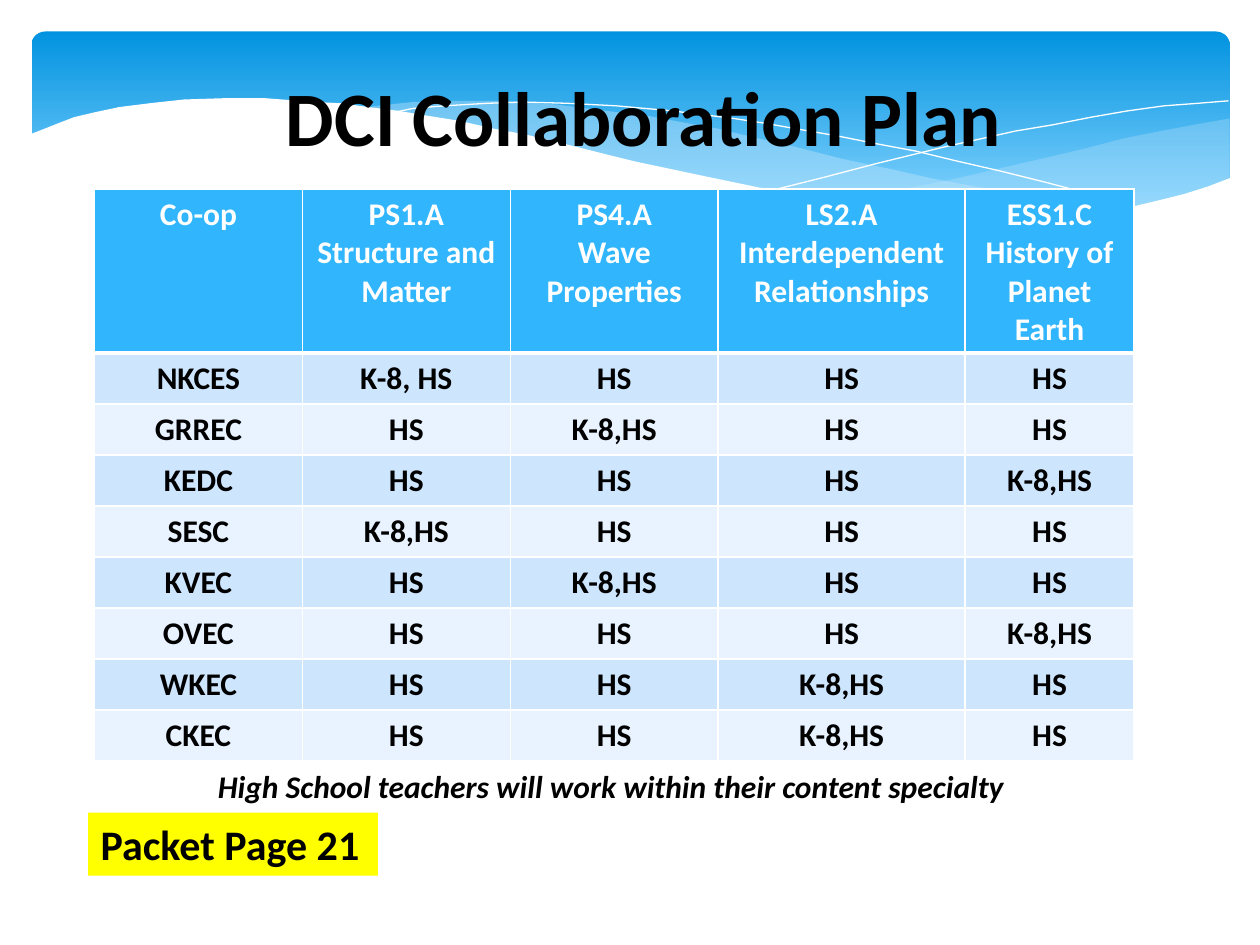
from lxml import etree
from pptx import Presentation
from pptx.dml.color import RGBColor
from pptx.enum.shapes import MSO_SHAPE as Shape
from pptx.enum.text import MSO_ANCHOR as Anchor, PP_ALIGN as Align
from pptx.oxml.ns import qn
from pptx.util import Inches, Pt

BLACK = RGBColor(0x00, 0x00, 0x00)
WHITE = RGBColor(0xFF, 0xFF, 0xFF)
YELLOW = RGBColor(0xFF, 0xFF, 0x00)
BANNER_TOP = RGBColor(0x02, 0x93, 0xE0)
BANNER_BOTTOM = RGBColor(0x83, 0xD3, 0xFE)
WAVE_BLUE = RGBColor(0xC6, 0xE7, 0xFC)
HEADER_BLUE = RGBColor(0x31, 0xB6, 0xFD)
BAND_DARK = RGBColor(0xCE, 0xE5, 0xFE)
BAND_LIGHT = RGBColor(0xE8, 0xF3, 0xFF)

prs = Presentation()
prs.slide_width, prs.slide_height = Inches(10), Inches(7.5)
slide = prs.slides.add_slide(prs.slide_layouts[6])
shapes = slide.shapes


def write_text(frame, text, size=18, color=BLACK, align=Align.LEFT,
               italic=False, wrap=True):
    """Fill a text frame with bold Calibri, one paragraph per line of text."""
    frame.text = text
    frame.word_wrap = wrap
    for paragraph in frame.paragraphs:
        paragraph.alignment = align
        font = paragraph.font
        font.name, font.size, font.bold, font.italic = "Calibri", Pt(size), True, italic
        font.color.rgb = color
        for run in paragraph.runs:
            run.font.color.rgb = color


def draw_wave(points, fill=None, opacity=100):
    """Draw a filled wave, or a white hairline when no fill is given."""
    start, *rest = [(Inches(x), Inches(y)) for x, y in points]
    builder = shapes.build_freeform(*start)
    builder.add_line_segments(rest, close=fill is not None)
    wave = builder.convert_to_shape()
    wave.shadow.inherit = False
    if fill is None:
        wave.fill.background()
        wave.line.color.rgb = WHITE
        wave.line.width = Pt(0)
        return
    wave.fill.solid()
    wave.fill.fore_color.rgb = fill
    wave.line.fill.background()
    if opacity < 100:
        tint = wave._element.spPr.find(qn("a:solidFill"))[0]
        etree.SubElement(tint, qn("a:alpha"), val=str(opacity * 1000))


# Banner with waves
banner = shapes.add_shape(Shape.ROUNDED_RECTANGLE, Inches(0.25), Inches(0.25),
                          Inches(9.51), Inches(1.56))
banner.adjustments[0] = 0.07
banner.shadow.inherit = False
banner.line.fill.background()
banner.fill.gradient()
banner.fill.gradient_angle = 270
for stop, position, color in zip(banner.fill.gradient_stops, (0, 0.9),
                                 (BANNER_TOP, BANNER_BOTTOM)):
    stop.position = position
    stop.color.rgb = color

draw_wave([(9.76, 0.94), (9.48, 0.99), (9.21, 1.04), (8.91, 1.1), (8.61, 1.18),
           (8.05, 1.31), (7.53, 1.43), (7.06, 1.52), (6.61, 1.6), (6.91, 1.64),
           (7.19, 1.67), (7.45, 1.69), (7.81, 1.72), (8.35, 1.72), (8.63, 1.7),
           (8.89, 1.66), (9.13, 1.62), (9.35, 1.56), (9.63, 1.47), (9.76, 1.41)],
          fill=WAVE_BLUE, opacity=29)
draw_wave([(8.93, 1.67), (8.66, 1.64), (8.07, 1.54), (7.41, 1.42), (7.06, 1.34),
           (6.68, 1.26), (6.29, 1.16), (5.98, 1.09), (5.69, 1.02), (5.41, 0.97),
           (5.14, 0.92), (4.89, 0.89), (4.65, 0.86), (4.42, 0.83), (3.99, 0.8),
           (3.61, 0.8), (3.28, 0.81), (2.99, 0.84), (2.86, 0.86), (3.23, 0.9),
           (3.62, 0.97), (4.04, 1.06), (4.49, 1.16), (4.91, 1.26), (5.3, 1.35),
           (5.66, 1.43), (6.01, 1.5), (6.34, 1.56), (6.65, 1.61), (6.95, 1.65),
           (7.22, 1.68), (7.61, 1.71), (7.96, 1.73), (8.28, 1.73), (8.57, 1.71)],
          fill=WAVE_BLUE, opacity=40)
draw_wave([(3.09, 0.9), (3.28, 0.86), (3.53, 0.84), (3.87, 0.82), (4.16, 0.81),
           (4.5, 0.82), (4.89, 0.84), (5.33, 0.88), (5.82, 0.94), (6.08, 0.98),
           (6.36, 1.03), (6.65, 1.08), (6.95, 1.14), (7.27, 1.2), (7.6, 1.28),
           (7.95, 1.36), (8.31, 1.45), (8.69, 1.55), (9.07, 1.66)])
draw_wave([(6.13, 1.51), (6.53, 1.41), (6.95, 1.3), (7.48, 1.17), (8.06, 1.04),
           (8.36, 0.99), (8.66, 0.93), (8.95, 0.88), (9.24, 0.84), (9.51, 0.82),
           (9.75, 0.8)])
draw_wave([(9.77, 1.41), (9.59, 1.48), (9.4, 1.54), (9.2, 1.59), (8.99, 1.64),
           (8.75, 1.67), (8.5, 1.7), (8.23, 1.71), (7.93, 1.71), (7.61, 1.7),
           (7.26, 1.67), (6.88, 1.62), (6.48, 1.56), (6.03, 1.49), (5.55, 1.39),
           (5.03, 1.28), (4.47, 1.14), (4.18, 1.07), (3.91, 1.02), (3.65, 0.96),
           (3.4, 0.92), (3.16, 0.88), (2.92, 0.85), (2.71, 0.82), (2.5, 0.81),
           (2.11, 0.78), (1.77, 0.78), (1.46, 0.79), (1.19, 0.82), (0.95, 0.85),
           (0.76, 0.89), (0.59, 0.93), (0.46, 0.98), (0.36, 1.02), (0.23, 1.07),
           (0.23, 2.24), (9.77, 2.24)], fill=WHITE)

title = shapes.add_textbox(Inches(2.17), Inches(0.5), Inches(6.13), Inches(0.84))
write_text(title.text_frame, "DCI Collaboration Plan", size=44)

# Collaboration table
plan_rows = [
    ["Co-op", "PS1.A\nStructure and Matter", "PS4.A\nWave Properties",
     "LS2.A\nInterdependent\nRelationships", "ESS1.C\nHistory of Planet Earth"],
    ["NKCES", "K-8, HS", "HS", "HS", "HS"],
    ["GRREC", "HS", "K-8,HS", "HS", "HS"],
    ["KEDC", "HS", "HS", "HS", "K-8,HS"],
    ["SESC", "K-8,HS", "HS", "HS", "HS"],
    ["KVEC", "HS", "K-8,HS", "HS", "HS"],
    ["OVEC", "HS", "HS", "HS", "K-8,HS"],
    ["WKEC", "HS", "HS", "K-8,HS", "HS"],
    ["CKEC", "HS", "HS", "K-8,HS", "HS"],
]
column_widths = [1.65, 1.65, 1.65, 1.96, 1.34]
plan = shapes.add_table(len(plan_rows), len(column_widths), Inches(0.75),
                        Inches(1.5), Inches(8.25), Inches(4.54)).table
for column, width in zip(plan.columns, column_widths):
    column.width = Inches(width)

for r, row in enumerate(plan_rows):
    is_header = r == 0
    plan.rows[r].height = Inches(1.3 if is_header else 0.405)
    band = HEADER_BLUE if is_header else BAND_DARK if r % 2 else BAND_LIGHT
    borders = {"a:lnL": 1, "a:lnR": 1, "a:lnT": 3 if r == 1 else 1,
               "a:lnB": 3 if is_header else 1}
    for c, entry in enumerate(row):
        cell = plan.cell(r, c)
        write_text(cell.text_frame, entry, align=Align.CENTER,
                   color=WHITE if is_header else BLACK)
        cell.fill.solid()
        cell.fill.fore_color.rgb = band
        cell_props = cell._tc.get_or_add_tcPr()
        for index, (side, points) in enumerate(borders.items()):
            edge = etree.Element(qn(side), w=str(Pt(points)))
            edge_fill = etree.SubElement(edge, qn("a:solidFill"))
            etree.SubElement(edge_fill, qn("a:srgbClr"), val=str(WHITE))
            cell_props.insert(index, edge)

# Notes below the table
specialty_note = shapes.add_textbox(Inches(0.7), Inches(6.04), Inches(8.3), Inches(0.4))
write_text(specialty_note.text_frame,
           "High School teachers will work within their content specialty",
           align=Align.CENTER, italic=True)

packet_page = shapes.add_shape(Shape.RECTANGLE, Inches(0.7), Inches(6.45),
                               Inches(2.3), Inches(0.5))
packet_page.shadow.inherit = False
packet_page.fill.solid()
packet_page.fill.fore_color.rgb = YELLOW
packet_page.line.fill.background()
packet_page.text_frame.vertical_anchor = Anchor.TOP
write_text(packet_page.text_frame, "Packet Page 21", size=24)

prs.save("out.pptx")
